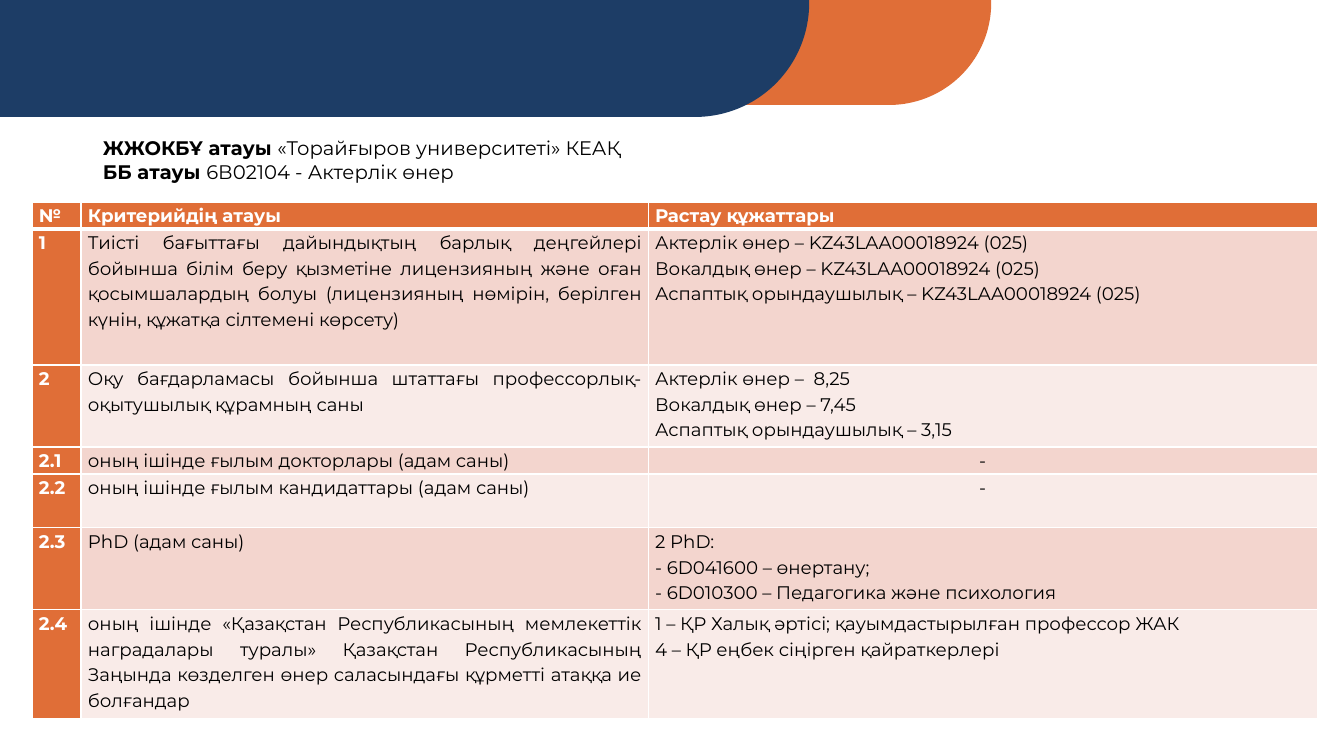
"""Build the slide with the criteria table of the acting programme."""
from math import cos, pi, sin

from lxml import etree
from pptx import Presentation, util as u
from pptx.dml.color import RGBColor
from pptx.enum import text
from pptx.oxml.ns import qn

PX = 914400 / 100.8
FONT = "Montserrat"
ORANGE, NAVY, WHITE, BLACK = "E06E37", "1D3D66", "FFFFFF", "000000"
BANDS = ["F9EBE8", "F3D5CE"]
ALIGN = text.PP_ALIGN

BANNERS = [(267, 991, 105, 102, ORANGE), (0, 809, 117, 114, NAVY)]
INTRO = [
    ("ЖЖОКБҰ атауы ", "«Торайғыров университеті» КЕАҚ"),
    ("ББ атауы ", "6В02104 - Актерлік өнер"),
]
INTRO_BOX = (93, 131, 552, 62)
SPOT = (32, 202)
COLS = [49, 567, 669]
ROWS = [27, 136, 82, 27, 54, 82, 109]
CELLS = [
    ("№", "Критерийдің атауы", ["Растау құжаттары"]),
    ("1", "Тиісті бағыттағы дайындықтың барлық деңгейлері бойынша білім беру "
          "қызметіне лицензияның және оған қосымшалардың болуы (лицензияның "
          "нөмірін, берілген күнін, құжатқа сілтемені көрсету)",
     ["Актерлік өнер – KZ43LAA00018924 (025)",
      "Вокалдық өнер – KZ43LAA00018924 (025)",
      "Аспаптық орындаушылық – KZ43LAA00018924 (025)"]),
    ("2", "Оқу бағдарламасы бойынша штаттағы профессорлық-оқытушылық құрамның саны",
     ["Актерлік өнер –  8,25",
      "Вокалдық өнер – 7,45",
      "Аспаптық орындаушылық – 3,15"]),
    ("2.1", "оның ішінде ғылым докторлары (адам саны)", ["-"]),
    ("2.2", "оның ішінде ғылым кандидаттары (адам саны)", ["-"]),
    ("2.3", "PhD (адам саны)",
     ["2 PhD:",
      "- 6D041600 – өнертану;",
      "- 6D010300 – Педагогика және психология"]),
    ("2.4", "оның ішінде «Қазақстан Республикасының мемлекеттік наградалары туралы» "
            "Қазақстан Республикасының Заңында көзделген өнер саласындағы құрметті "
            "атаққа ие болғандар",
     ["1 – ҚР Халық әртісі; қауымдастырылған профессор ЖАК",
      "4 – ҚР еңбек сіңірген қайраткерлері"]),
]


def px(n):
    """Turn px into EMU."""
    return u.Emu(round(n * PX))


def paint(fill, tone):
    """Give a fill one solid colour."""
    fill.solid()
    fill.fore_color.rgb = RGBColor.from_string(tone)


def put(obj, **vals):
    """Set several attributes on an object."""
    for name, val in vals.items():
        setattr(obj, name, val)


def write(para, words, size, tone, bold):
    """Add one styled run to a paragraph."""
    run = para.add_run()
    run.text = words
    put(run.font, name=FONT, size=u.Pt(size), bold=bold)
    run.font.color.rgb = RGBColor.from_string(tone)


def banner(slide, left, right, high, bend, tone):
    """Draw a band whose lower right corner is round."""
    turns = [pi / 2 * i / 60 for i in range(61)]
    arc = [(right - bend + bend * cos(t), high - bend + bend * sin(t)) for t in turns]
    pts = [(px(x), px(y)) for x, y in [(right, 0), *arc, (left, high)]]
    form = slide.shapes.build_freeform(px(left), 0)
    form.add_line_segments(pts, close=True)
    shape = form.convert_to_shape()
    shape.shadow.inherit = False
    paint(shape.fill, tone)
    shape.line.fill.background()


def border(cell, row):
    """Draw the white cell borders, thick below the header."""
    wide = {"lnT": row == 1, "lnB": row == 0}
    for side in ("lnL", "lnR", "lnT", "lnB"):
        width = u.Pt(3 if wide.get(side) else 1)
        line = etree.SubElement(cell._tc.get_or_add_tcPr(), qn("a:" + side), w=str(width))
        solid = etree.SubElement(line, qn("a:solidFill"))
        etree.SubElement(solid, qn("a:srgbClr"), val=WHITE)


def fill_cell(cell, row, col, lines):
    """Fill and format one table cell."""
    head = row == 0 or col == 0
    border(cell, row)
    paint(cell.fill, ORANGE if head else BANDS[row % 2])
    put(cell, margin_left=px(7), margin_right=px(7), margin_top=0, margin_bottom=0)
    for i, words in enumerate(lines):
        para = cell.text_frame.paragraphs[0] if i == 0 else cell.text_frame.add_paragraph()
        side = ALIGN.JUSTIFY if col == 1 and not head else ALIGN.LEFT
        put(para, line_spacing=1.15, alignment=ALIGN.CENTER if words == "-" else side)
        write(para, words, 13, WHITE if head else BLACK, head)


def main():
    """Build and save the slide."""
    deck = Presentation()
    put(deck, slide_width=u.Inches(13.33), slide_height=u.Inches(7.5))
    slide = deck.slides.add_slide(deck.slide_layouts[6])
    for band in BANNERS:
        banner(slide, *band)

    size = px(sum(COLS)), px(sum(ROWS))
    table = slide.shapes.add_table(len(ROWS), len(COLS), *map(px, SPOT), *size).table
    for col, wide in zip(table.columns, COLS):
        col.width = px(wide)
    for r, (high, (mark, name, proof)) in enumerate(zip(ROWS, CELLS)):
        table.rows[r].height = px(high)
        for c, lines in enumerate(([mark], [name], proof)):
            fill_cell(table.cell(r, c), r, c, lines)

    frame = slide.shapes.add_textbox(*map(px, INTRO_BOX)).text_frame
    frame.word_wrap = False
    for i, (label, words) in enumerate(INTRO):
        para = frame.paragraphs[0] if i == 0 else frame.add_paragraph()
        write(para, label, 14, BLACK, True)
        write(para, words, 14, BLACK, False)
    deck.save("out.pptx")


if __name__ == "__main__":
    main()
